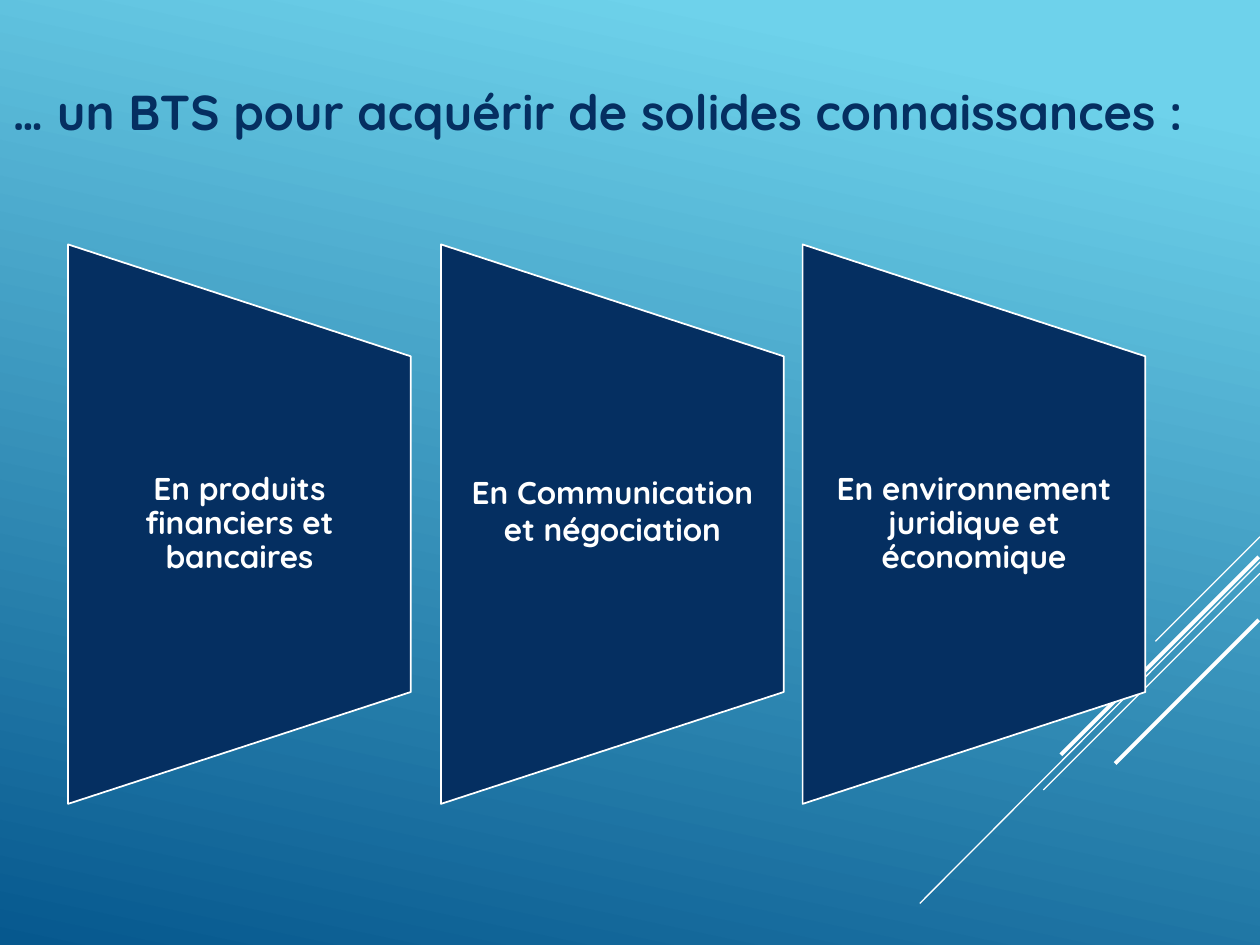
"""Build the slide on the knowledge gained in a BTS course."""
from lxml.etree import SubElement
from pptx import Presentation
from pptx.dml.color import RGBColor
from pptx.enum.shapes import MSO_CONNECTOR as Connector, MSO_SHAPE as Shape
from pptx.enum.text import MSO_ANCHOR as Anchor, MSO_AUTO_SIZE as AutoSize, PP_ALIGN as Align
from pptx.oxml.ns import qn
from pptx.util import Inches, Pt

COLORS = {"navy": "052F61", "white": "FFFFFF", "sky": "6ED2EB", "ocean": "06588E"}
RAYS = [
    (10, 4.26, 9.17, 5.09, 0.75),
    (10, 4.46, 7.3, 7.17, 0.75),
    (10, 4.55, 8.28, 6.27, 0.75),
    (9.99, 4.42, 8.42, 5.99, 2.25),
    (9.99, 4.92, 8.85, 6.06, 2.25),
]
PANELS = [
    (1.9, "En produits financiers et bancaires", 0.9, 0),
    (4.86, "En Communication et négociation", 1, 0.22),
    (7.73, "En environnement juridique et économique", 0.9, 0),
]
PANEL_MIDDLE, PANEL_LENGTH, PANEL_WIDTH, LABEL_HEIGHT = 4.16, 4.44, 2.72, 2.67


def color(name):
    return RGBColor.from_string(COLORS[name])


def apply_format(target, values):
    for name, value in values.items():
        setattr(target, name, value)


class SlideBuilder:
    """Hold the text style and the current slide."""

    def __init__(self, slide):
        self.slide = slide
        self.font = {"name": "Quicksand", "bold": True}

    def background(self, start, end, angle):
        fill = self.slide.background.fill
        fill.gradient()
        fill.gradient_angle = 360 - angle
        for stop, (name, position) in zip(fill.gradient_stops, (start, end)):
            stop.color.rgb = color(name)
            stop.position = position

    def ray(self, x1, y1, x2, y2, weight):
        ends = map(Inches, (x1, y1, x2, y2))
        connector = self.slide.shapes.add_connector(Connector.STRAIGHT, *ends)
        connector.line.color.rgb = color("white")
        connector.line.width = Pt(weight)
        SubElement(connector._element.spPr, qn("a:effectLst"))

    def text(self, frame, words, size, color_name, frame_format, paragraph_format):
        apply_format(frame, {"word_wrap": True, "auto_size": AutoSize.NONE, **frame_format})
        paragraph = frame.paragraphs[0]
        apply_format(paragraph, paragraph_format)
        run = paragraph.add_run()
        run.text = words
        apply_format(run.font, {**self.font, "size": Pt(size)})
        run.font.color.rgb = color(color_name)

    def title(self, words, left, top, width, height):
        title = self.slide.shapes.title
        apply_format(title, {"left": Inches(left), "top": Inches(top),
                             "width": Inches(width), "height": Inches(height)})
        self.text(title.text_frame, words, 28, "navy",
                  {"vertical_anchor": Anchor.TOP}, {"alignment": Align.LEFT})

    def panel(self, center, words, line_spacing, bottom_inset):
        shape = self.slide.shapes.add_shape(
            Shape.FLOWCHART_MANUAL_OPERATION,
            Inches(center - PANEL_LENGTH / 2), Inches(PANEL_MIDDLE - PANEL_WIDTH / 2),
            Inches(PANEL_LENGTH), Inches(PANEL_WIDTH))
        shape.rotation = 270
        shape.shadow.inherit = False
        shape.fill.solid()
        shape.fill.fore_color.rgb = color("navy")
        shape.line.color.rgb = color("white")
        shape.line.width = Pt(1)
        label = self.slide.shapes.add_textbox(
            Inches(center - PANEL_WIDTH / 2), Inches(PANEL_MIDDLE - LABEL_HEIGHT / 2),
            Inches(PANEL_WIDTH), Inches(LABEL_HEIGHT))
        self.text(label.text_frame, words, 18, "white",
                  {"vertical_anchor": Anchor.MIDDLE,
                   "margin_left": Inches(0.12), "margin_right": Inches(0.12),
                   "margin_top": 0, "margin_bottom": Inches(bottom_inset)},
                  {"alignment": Align.CENTER, "line_spacing": line_spacing})


def main():
    presentation = Presentation()
    presentation.slide_width, presentation.slide_height = Inches(10), Inches(7.5)
    builder = SlideBuilder(presentation.slides.add_slide(presentation.slide_layouts[5]))
    builder.background(("sky", 0.1), ("ocean", 1), 102)
    for ray in RAYS:
        builder.ray(*ray)
    for panel in PANELS:
        builder.panel(*panel)
    builder.title("… un BTS pour acquérir de solides connaissances :", 0, 0.6, 9.88, 0.57)
    presentation.save("out.pptx")


if __name__ == "__main__":
    main()
